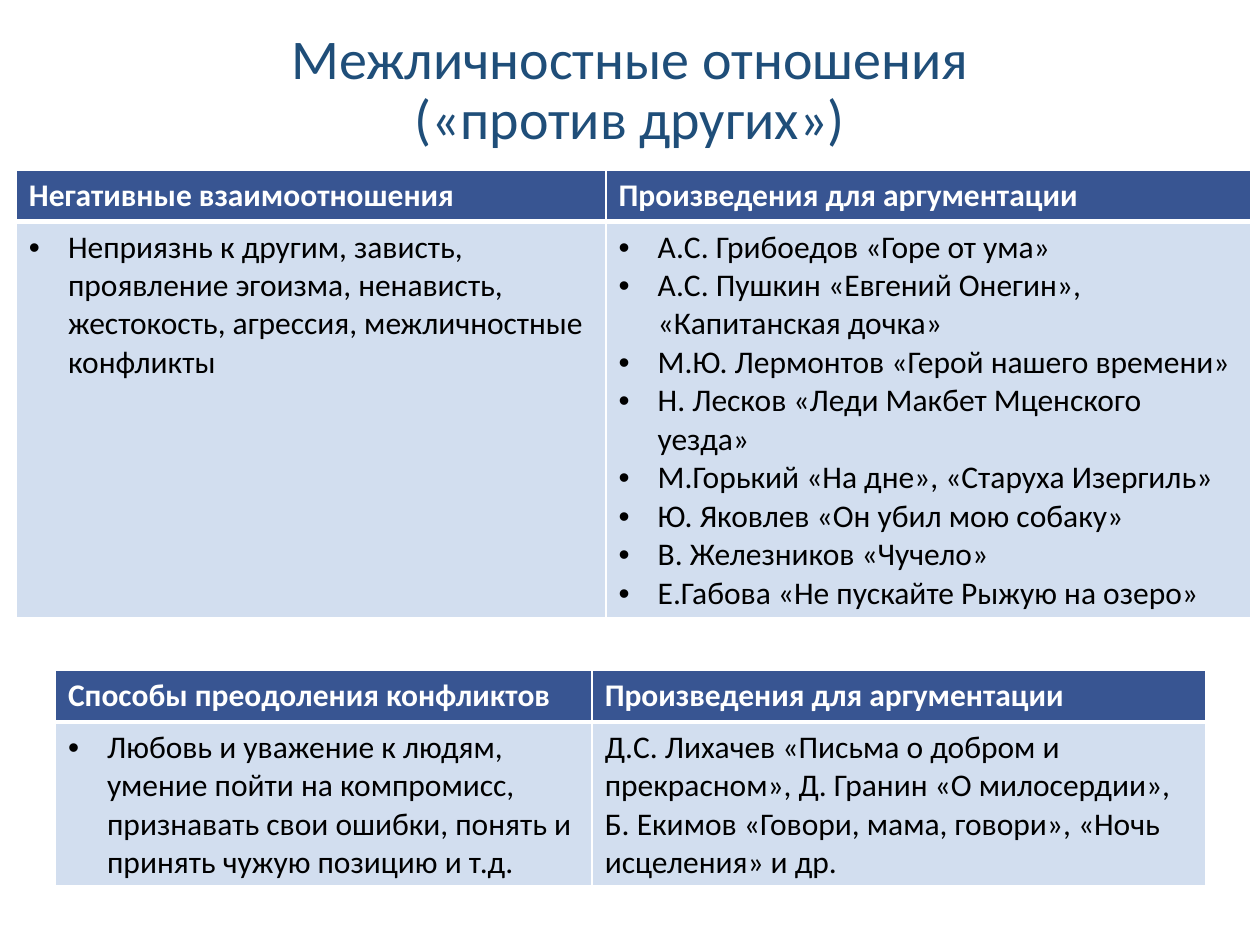
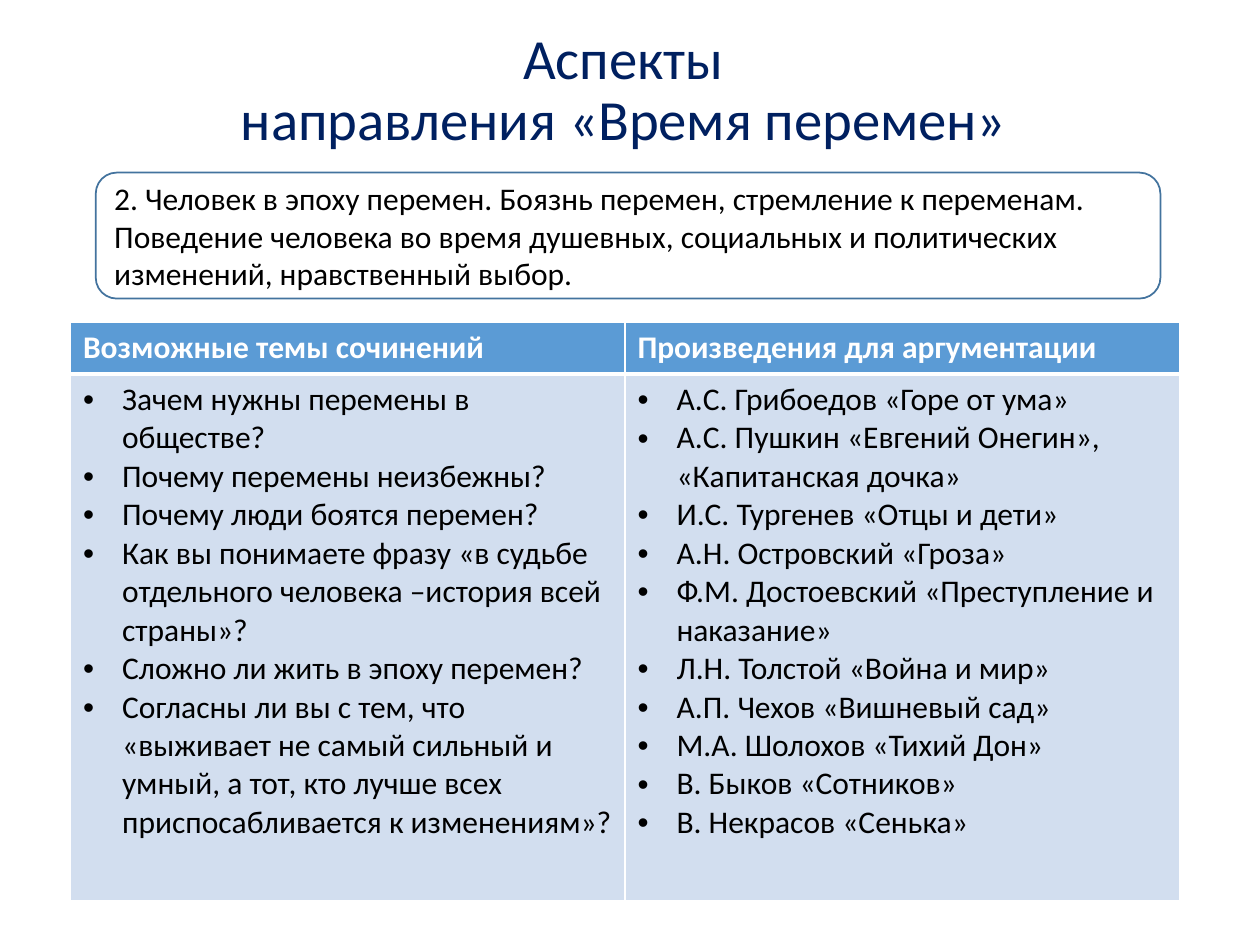
import pptx
import pptx.dml.color
import pptx.enum.shapes
import pptx.enum.text
import pptx.oxml
import pptx.oxml.ns
import pptx.util
from pptx.util import Inches

RGBColor = pptx.dml.color.RGBColor
WHITE = RGBColor(0xFF, 0xFF, 0xFF)
BLACK = RGBColor(0x00, 0x00, 0x00)
STEEL = RGBColor(0x1F, 0x4E, 0x79)
NAVY = RGBColor(0x00, 0x20, 0x60)
DARK_BLUE = RGBColor(0x38, 0x55, 0x92)
BLUE = RGBColor(0x5B, 0x9B, 0xD5)
PALE_BLUE = RGBColor(0xD2, 0xDE, 0xEF)
OUTLINE = RGBColor(0x43, 0x73, 0x9E)

FONT = "Calibri"
BODY_SIZE = 18
HEADER_HEIGHT = 0.41
BULLET_INDENT = 0.31
THIN, THICK = 1, 3
WORKS = "Произведения для аргументации"

# Content: a list in a cell is bulleted, a string is plain text
SLIDES = [
    {
        "title": "Межличностные отношения\v(«против других»)",
        "title_format": {"size": pptx.util.Pt(32), "color": STEEL},
        "tables": [
            {
                "left": 0.13, "top": 1.35, "columns": (4.68, 5.12),
                "body_height": 3.14, "header_fill": DARK_BLUE,
                "headers": ("Негативные взаимоотношения", WORKS),
                "body": (
                    ["Неприязнь к другим, зависть, проявление эгоизма, ненависть, "
                     "жестокость, агрессия, межличностные конфликты"],
                    ["А.С. Грибоедов «Горе от ума»",
                     "А.С. Пушкин «Евгений Онегин», «Капитанская дочка»",
                     "М.Ю. Лермонтов «Герой нашего времени»",
                     "Н. Лесков «Леди Макбет Мценского уезда»",
                     "М.Горький «На дне», «Старуха Изергиль»",
                     "Ю. Яковлев «Он убил мою собаку»",
                     "В. Железников «Чучело»",
                     "Е.Габова «Не пускайте Рыжую на озеро»"],
                ),
            },
            {
                "left": 0.44, "top": 5.32, "columns": (4.26, 4.87),
                "body_height": 1.3, "header_fill": DARK_BLUE,
                "headers": ("Способы преодоления конфликтов", WORKS),
                "body": (
                    ["Любовь и уважение к людям, умение пойти на компромисс, "
                     "признавать свои ошибки, понять и принять чужую позицию и т.д."],
                    "Д.С. Лихачев «Письма о добром и прекрасном», Д. Гранин "
                    "«О милосердии», Б. Екимов «Говори, мама, говори», "
                    "«Ночь исцеления» и др.",
                ),
            },
        ],
    },
    {
        "title": "Аспекты \vнаправления «Время перемен» ",
        "title_format": {"size": pptx.util.Pt(32.4), "color": NAVY},
        "callout": "2. Человек в эпоху перемен. Боязнь перемен, стремление к переменам. "
                   "Поведение человека во время душевных, социальных и политических "
                   "изменений, нравственный выбор.",
        "tables": [
            {
                "left": 0.56, "top": 2.56, "columns": (4.4, 4.4),
                "body_height": 4.18, "header_fill": BLUE,
                "headers": ("Возможные темы сочинений", WORKS),
                "body": (
                    ["Зачем нужны перемены в обществе?",
                     "Почему перемены неизбежны?",
                     "Почему люди боятся перемен?",
                     "Как вы понимаете фразу «в судьбе отдельного человека "
                     "–история всей страны»?",
                     "Сложно ли жить в эпоху перемен?",
                     "Согласны ли вы с тем, что «выживает не самый сильный и умный, "
                     "а тот, кто лучше всех приспосабливается к изменениям»?"],
                    ["А.С. Грибоедов «Горе от ума»",
                     "А.С. Пушкин «Евгений Онегин», «Капитанская дочка»",
                     "И.С. Тургенев «Отцы и дети»",
                     "А.Н. Островский «Гроза»",
                     "Ф.М. Достоевский «Преступление и наказание»",
                     "Л.Н. Толстой «Война и мир»",
                     "А.П. Чехов «Вишневый сад»",
                     "М.А. Шолохов «Тихий Дон»",
                     "В. Быков «Сотников»",
                     "В. Некрасов «Сенька»"],
                ),
            },
        ],
    },
]

HEADER_FORMAT = {"size": pptx.util.Pt(BODY_SIZE), "color": WHITE, "bold": True}
BODY_FORMAT = {"size": pptx.util.Pt(BODY_SIZE), "color": BLACK, "bold": False}


def format_paragraph(paragraph, text, text_format):
    paragraph.text = text
    for run in paragraph.runs:
        run.font.name = FONT
        for name, value in text_format.items():
            if name == "color":
                run.font.color.rgb = value
            else:
                setattr(run.font, name, value)


def add_bullet(paragraph):
    properties = paragraph._p.get_or_add_pPr()
    properties.set("marL", str(Inches(BULLET_INDENT)))
    properties.set("indent", str(-Inches(BULLET_INDENT)))
    for tag, name, value in (("a:buFont", "typeface", "Arial"), ("a:buChar", "char", "•")):
        element = pptx.oxml.parse_xml(f"<{tag} {pptx.oxml.ns.nsdecls('a')}/>")
        element.set(name, value)
        properties.append(element)


def set_borders(cell, top, bottom):
    properties = cell._tc.get_or_add_tcPr()
    for side, width in (("L", THIN), ("R", THIN), ("T", top), ("B", bottom)):
        properties.append(pptx.oxml.parse_xml(
            f'<a:ln{side} {pptx.oxml.ns.nsdecls("a")} w="{pptx.util.Pt(width)}">'
            f'<a:solidFill><a:srgbClr val="{WHITE}"/></a:solidFill></a:ln{side}>'))


def fill_cell(cell, content, text_format, fill, top, bottom):
    set_borders(cell, top, bottom)
    cell.fill.solid()
    cell.fill.fore_color.rgb = fill
    bulleted = isinstance(content, list)
    frame = cell.text_frame
    for index, text in enumerate(content if bulleted else [content]):
        paragraph = frame.add_paragraph() if index else frame.paragraphs[0]
        if bulleted:
            add_bullet(paragraph)
        format_paragraph(paragraph, text, text_format)


def add_comparison(slide, data):
    heights = (HEADER_HEIGHT, data["body_height"])
    columns = data["columns"]
    table = slide.shapes.add_table(
        2, len(columns), Inches(data["left"]), Inches(data["top"]),
        Inches(sum(columns)), Inches(sum(heights))).table
    for row, height in zip(table.rows, heights):
        row.height = Inches(height)
    for index, width in enumerate(columns):
        table.columns[index].width = Inches(width)
        fill_cell(table.cell(0, index), data["headers"][index], HEADER_FORMAT,
                  data["header_fill"], THIN, THICK)
        fill_cell(table.cell(1, index), data["body"][index], BODY_FORMAT,
                  PALE_BLUE, THICK, THIN)


def add_title(slide, text, text_format):
    box = slide.shapes.add_textbox(Inches(0.69), Inches(0.15), Inches(8.62), Inches(1.15))
    frame = box.text_frame
    frame.word_wrap = True
    frame.vertical_anchor = pptx.enum.text.MSO_ANCHOR.MIDDLE
    paragraph = frame.paragraphs[0]
    paragraph.alignment = pptx.enum.text.PP_ALIGN.CENTER
    paragraph.line_spacing = 0.9
    format_paragraph(paragraph, text, text_format)


def add_callout(slide, text):
    shape = slide.shapes.add_shape(
        pptx.enum.shapes.MSO_SHAPE.ROUNDED_RECTANGLE,
        Inches(0.76), Inches(1.37), Inches(8.45), Inches(1))
    shape.shadow.inherit = False
    shape.fill.solid()
    shape.fill.fore_color.rgb = WHITE
    shape.line.color.rgb = OUTLINE
    shape.line.width = pptx.util.Pt(1)
    frame = shape.text_frame
    frame.word_wrap = True
    frame.vertical_anchor = pptx.enum.text.MSO_ANCHOR.MIDDLE
    paragraph = frame.paragraphs[0]
    paragraph.alignment = pptx.enum.text.PP_ALIGN.LEFT
    format_paragraph(paragraph, text, BODY_FORMAT)


def main():
    presentation = pptx.Presentation()
    presentation.slide_width = Inches(10)
    presentation.slide_height = Inches(7.5)
    for content in SLIDES:
        slide = presentation.slides.add_slide(presentation.slide_layouts[6])
        add_title(slide, content["title"], content["title_format"])
        for data in content["tables"]:
            add_comparison(slide, data)
        if "callout" in content:
            add_callout(slide, content["callout"])
    presentation.save("out.pptx")


if __name__ == "__main__":
    main()
